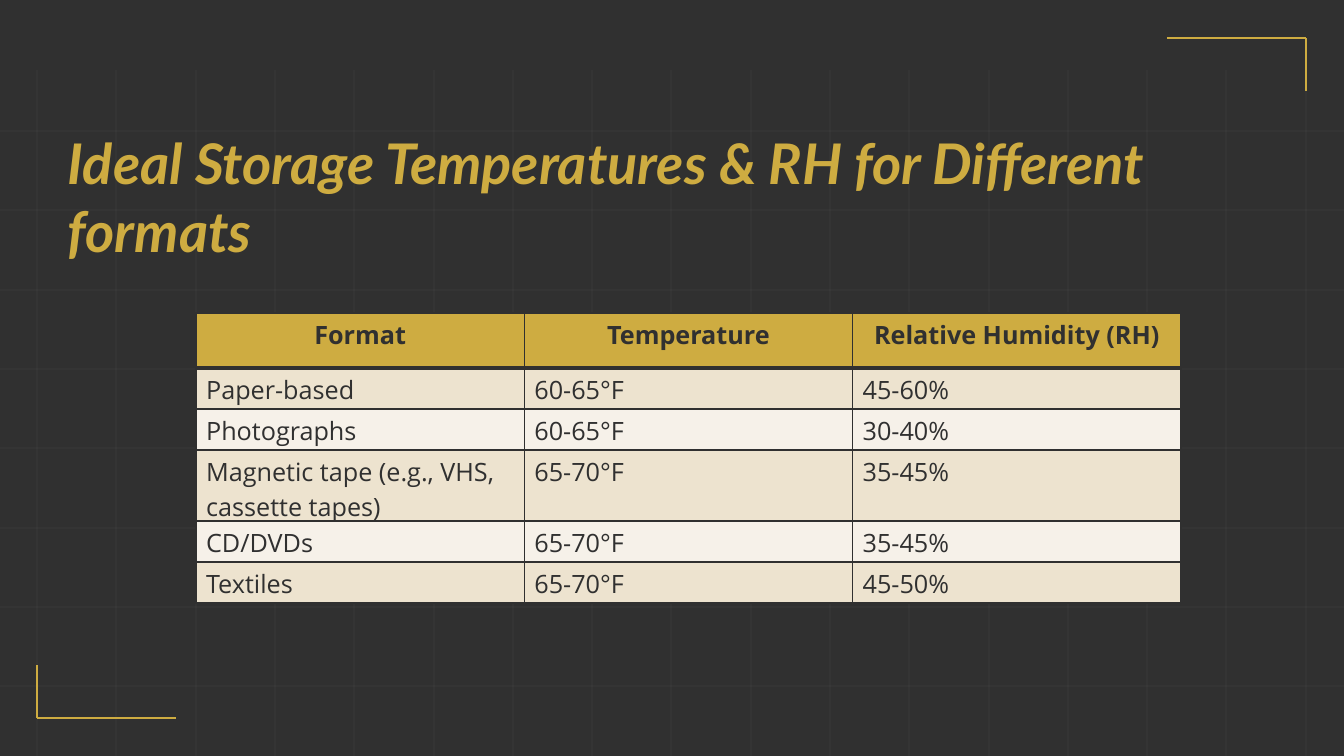
from lxml.etree import SubElement
from pptx import Presentation
from pptx.dml.color import RGBColor
from pptx.enum.shapes import MSO_CONNECTOR
from pptx.enum.text import PP_ALIGN
from pptx.oxml.ns import qn
from pptx.util import Pt

DARK = RGBColor(0x30, 0x30, 0x30)
GOLD = RGBColor(0xCE, 0xAC, 0x41)
GRAY = RGBColor(0x80, 0x80, 0x80)
SAND = RGBColor(0xED, 0xE3, 0xCF)
CREAM = RGBColor(0xF6, 0xF1, 0xE9)
WIDE, HIGH = 1344, 756
STEP = 79.3
ROWS = [
    ("Format", "Temperature", "Relative Humidity (RH)"),
    ("Paper-based", "60-65°F", "45-60%"),
    ("Photographs", "60-65°F", "30-40%"),
    ("Magnetic tape (e.g., VHS, cassette tapes)", "65-70°F", "35-45%"),
    ("CD/DVDs", "65-70°F", "35-45%"),
    ("Textiles", "65-70°F", "45-50%"),
]
TALL = [55, 41, 41, 71, 41, 41]


def px(n):
    """Turn pixels into EMU."""
    return round(n * 914400 / 100.8)


class Deck:
    """Hold the style and the current slide."""

    def __init__(self):
        """Open a blank slide on a dark ground."""
        self.pres = Presentation()
        self.pres.slide_width, self.pres.slide_height = px(WIDE), px(HIGH)
        self.slide = self.pres.slides.add_slide(self.pres.slide_layouts[6])
        fill = self.slide.background.fill
        fill.solid()
        fill.fore_color.rgb = DARK

    def line(self, x1, y1, x2, y2, color, alpha=100):
        """Draw a straight line, see-through below 100 percent."""
        line = self.slide.shapes.add_connector(
            MSO_CONNECTOR.STRAIGHT, px(x1), px(y1), px(x2), px(y2))
        line.line.width = Pt(1.5)
        line.line.color.rgb = color
        props = line._element.spPr
        if alpha < 100:
            tint = props.find(".//" + qn("a:srgbClr"))
            SubElement(tint, qn("a:alpha"), val=str(alpha * 1000))
        SubElement(props, qn("a:effectLst"))

    def run(self, para, text, size, face, color, bold=False, slant=False):
        """Add one styled run."""
        run = para.add_run()
        run.text = text
        font = run.font
        font.size, font.name = Pt(size), face
        font.bold, font.italic = bold, slant
        font.color.rgb = color

    def title(self, x, y, w, h, text):
        """Add the heading."""
        frame = self.slide.shapes.add_textbox(px(x), px(y), px(w), px(h)).text_frame
        frame.word_wrap = True
        self.run(frame.paragraphs[0], text, 40, "Lato", GOLD, True, True)

    def edge(self, cell, side, width):
        """Add one cell border."""
        edge = SubElement(cell._tc.get_or_add_tcPr(), qn("a:ln" + side),
                          w=str(Pt(width)))
        fill = SubElement(edge, qn("a:solidFill"))
        SubElement(fill, qn("a:srgbClr"), val=str(DARK))

    def cell(self, cell, text, row):
        """Fill and style one cell."""
        head = row == 0
        for side in "LRTB":
            thick = (row, side) in ((0, "B"), (1, "T"))
            self.edge(cell, side, 3 if thick else 1)
        cell.fill.solid()
        cell.fill.fore_color.rgb = GOLD if head else SAND if row % 2 else CREAM
        cell.margin_top, cell.margin_bottom = px(5), 0
        para = cell.text_frame.paragraphs[0]
        para.alignment = PP_ALIGN.CENTER if head else PP_ALIGN.LEFT
        self.run(para, text, 18, "Open Sans", DARK, head)

    def table(self, x, y, w, rows, tall):
        """Add the table."""
        table = self.slide.shapes.add_table(
            len(rows), len(rows[0]), px(x), px(y), px(w), px(sum(tall))).table
        for i, row in enumerate(rows):
            table.rows[i].height = px(tall[i])
            for j, text in enumerate(row):
                self.cell(table.cell(i, j), text, i)


def main():
    """Build the slide."""
    deck = Deck()
    for i in range(17):
        x = round(37 + i * STEP)
        deck.line(x, 70, x, HIGH, GRAY, 5)
    for i in range(8):
        y = round(131 + i * STEP)
        deck.line(0, y, WIDE, y, GRAY, 5)
    deck.title(58, 124, 1211, 78,
               "Ideal Storage Temperatures & RH for Different formats")
    for x, y, way in ((1306, 38, 1), (37, 718, -1)):
        deck.line(x - 139 * way, y, x, y, GOLD)
        deck.line(x, y, x, y + 53 * way, GOLD)
    deck.table(196, 313, 985, ROWS, TALL)
    deck.pres.save("out.pptx")


if __name__ == "__main__":
    main()
